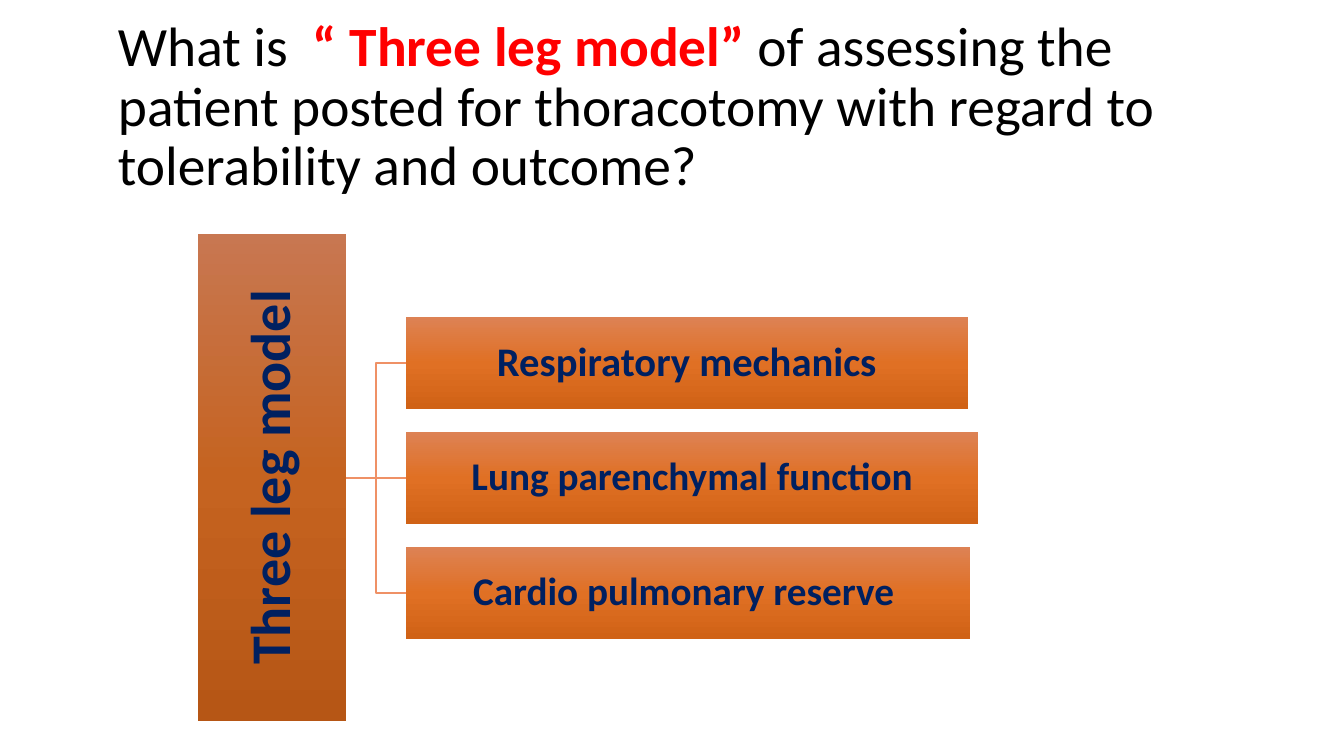
import copy
from pptx import Presentation, util as u
from pptx.dml.color import RGBColor
from pptx.enum import shapes, text
from pptx.oxml.ns import qn
from pptx.oxml.xmlchemy import OxmlElement

# Content
TITLE = [
    ("What is  ", False),
    ("“ Three leg model” ", True),
    ("of assessing the patient posted for thoracotomy with regard to "
     "tolerability and outcome?", False),
]
ROOT = "Three leg model"
LEGS = [  # label, box width in px, type size
    ("Respiratory mechanics", 562, 29),
    ("Lung parenchymal function", 572, 28),
    ("Cardio pulmonary reserve ", 564, 28),
]

THEME = {
    "font": "Calibri",
    "title": "000000", "accent": "FF0000", "label": "002060", "line": "EF9166",
    "root": ("C87751", "C56320", "B65615"),
    "leg": ("DD8254", "E07024", "D06216"),
    "title_size": 39.6, "root_size": 40,
}

# Layout in px
PAGE = (1344, 756)
HEAD = (108, 35, 1159, 146)
TRUNK = (198, 234, 148, 487)
LEG_X, LEG_H, GAP = 406, 92, 23


def px(n):
    return u.Emu(round(n * 12192000 / PAGE[0]))


def color(name):
    return RGBColor.from_string(name)


def style(run, size, hue, bold):
    font = run.font
    font.name, font.size, font.bold = THEME["font"], u.Pt(size), bold
    font.color.rgb = color(hue)


def shade(shape, hues):
    """Fill from top to bottom with evenly spaced colours."""
    fill = shape.fill
    fill.gradient()
    fill.gradient_angle = 270
    stops = shape._element.spPr.find(".//" + qn("a:gsLst"))
    stops.append(copy.deepcopy(stops[0]))
    for i, (stop, hue) in enumerate(zip(fill.gradient_stops, hues)):
        stop.position = i / (len(hues) - 1)
        stop.color.rgb = color(hue)


def add_box(slide, area, label, size, hues, inset):
    box = slide.shapes.add_shape(shapes.MSO_SHAPE.RECTANGLE, *map(px, area))
    box.shadow.inherit = False
    box.line.fill.background()
    shade(box, hues)
    frame = box.text_frame
    frame.text = label
    frame.word_wrap = True
    frame.vertical_anchor = text.MSO_ANCHOR.MIDDLE
    frame.margin_left = frame.margin_right = px(inset)
    frame.margin_top = frame.margin_bottom = px(inset)
    para = frame.paragraphs[0]
    para.alignment = text.PP_ALIGN.CENTER
    para.line_spacing = 0.9
    style(para.runs[0], size, THEME["label"], True)
    return box


def add_link(slide, start, end):
    kind = shapes.MSO_CONNECTOR
    kind = kind.STRAIGHT if start[1] == end[1] else kind.ELBOW
    link = slide.shapes.add_connector(kind, *map(px, start + end))
    link.line.color.rgb = color(THEME["line"])
    link.line.width = u.Pt(1)
    link._element.spPr.append(OxmlElement("a:effectLst"))


def add_title(slide):
    frame = slide.shapes.add_textbox(*map(px, HEAD)).text_frame
    frame.word_wrap = True
    frame.vertical_anchor = text.MSO_ANCHOR.MIDDLE
    para = frame.paragraphs[0]
    para.line_spacing = 0.9
    for words, strong in TITLE:
        run = para.add_run()
        run.text = words
        style(run, THEME["title_size"], THEME["accent" if strong else "title"], strong)


def main():
    deck = Presentation()
    deck.slide_width, deck.slide_height = map(px, PAGE)
    slide = deck.slides.add_slide(deck.slide_layouts[6])
    add_title(slide)

    # Leg centres, spread evenly about the middle of the trunk
    left, top, width, height = TRUNK
    mid = top + height // 2 + 1
    centres = [mid + (i - len(LEGS) // 2) * (LEG_H + GAP) for i in range(len(LEGS))]

    # Links
    for y in centres:
        add_link(slide, (left + width, mid), (LEG_X, y))

    # Trunk, read from bottom to top
    trunk = add_box(slide, TRUNK, ROOT, THEME["root_size"], THEME["root"], 3)
    trunk.text_frame._txBody.bodyPr.set("vert", "vert270")

    # Legs
    for (label, wide, size), y in zip(LEGS, centres):
        area = (LEG_X, y - LEG_H // 2, wide, LEG_H)
        add_box(slide, area, label, size, THEME["leg"], 2)

    deck.save("out.pptx")


if __name__ == "__main__":
    main()
